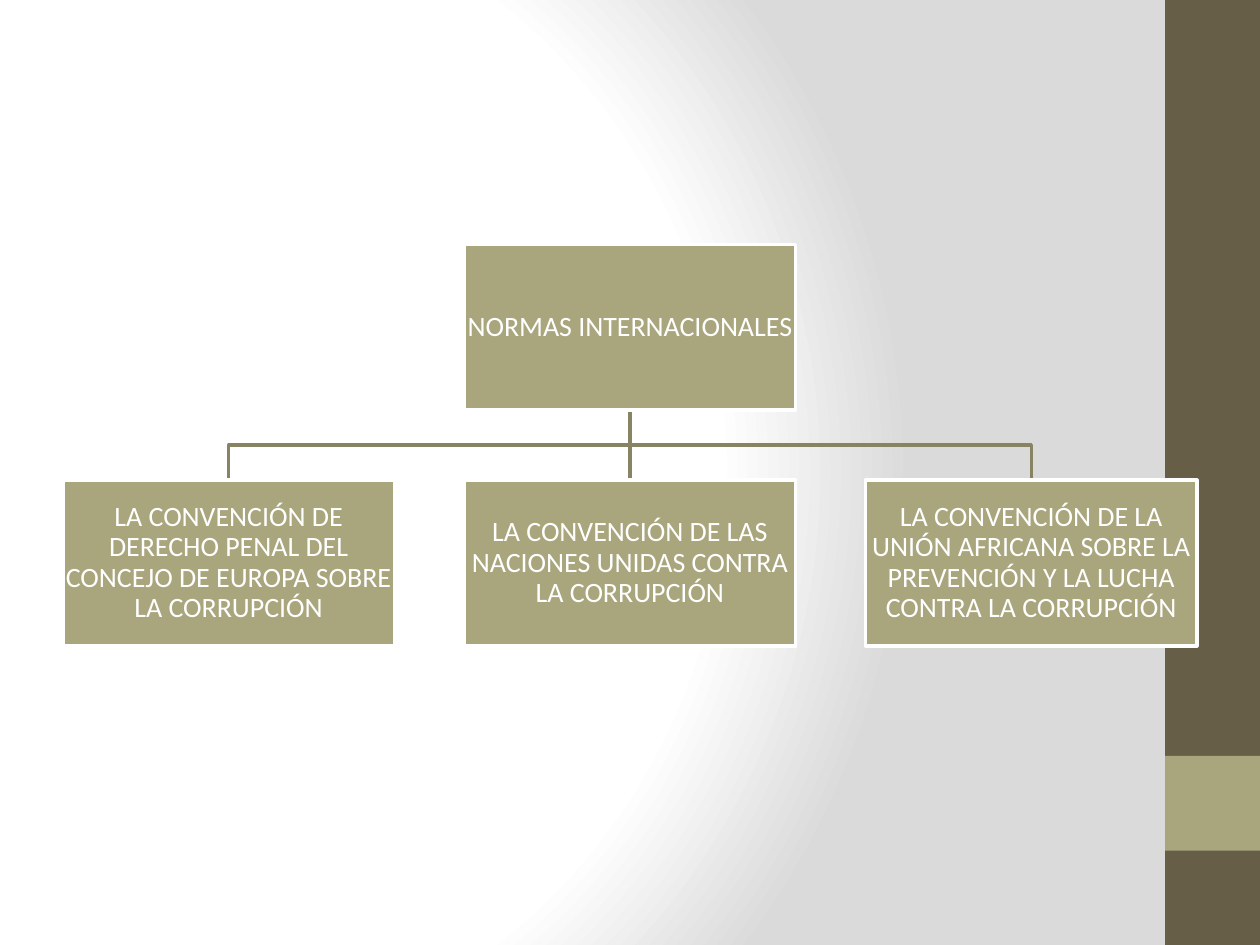
from lxml import etree
from pptx import Presentation
from pptx.dml.color import RGBColor
from pptx.enum.shapes import MSO_CONNECTOR, MSO_SHAPE
from pptx.enum.text import MSO_ANCHOR, PP_ALIGN
from pptx.oxml import parse_xml
from pptx.oxml.ns import nsdecls, qn
from pptx.util import Cm, Pt

RECT = MSO_SHAPE.RECTANGLE
STRAIGHT = MSO_CONNECTOR.STRAIGHT
MIDDLE = MSO_ANCHOR.MIDDLE
CENTER = PP_ALIGN.CENTER

WHITE = RGBColor(0xFF, 0xFF, 0xFF)
GREY = RGBColor(0xDA, 0xDA, 0xDA)
BROWN = RGBColor(0x67, 0x5E, 0x47)
OLIVE = RGBColor(0xA9, 0xA5, 0x7C)
MOSS = RGBColor(0x87, 0x84, 0x63)

ROOT = "NORMAS INTERNACIONALES"
RULES = [
    "LA CONVENCIÓN DE DERECHO PENAL DEL CONCEJO DE EUROPA SOBRE LA CORRUPCIÓN",
    "LA CONVENCIÓN DE LAS NACIONES UNIDAS CONTRA LA CORRUPCIÓN",
    "LA CONVENCIÓN DE LA UNIÓN AFRICANA SOBRE LA PREVENCIÓN Y LA LUCHA "
    "CONTRA LA CORRUPCIÓN",
]
BARS = [(0, 19.05, BROWN), (15.24, 1.91, OLIVE)]  # top, height, colour
STOPS = [(0, WHITE), (75, WHITE), (100, GREY)]

WIDE, HIGH = Cm(25.4), Cm(19.05)
BAR_W = Cm(1.91)
BOX_W, BOX_H = Cm(6.68), Cm(3.34)
EDGE = Cm(1.27)
ROOT_Y, RULE_Y = Cm(4.93), Cm(9.68)
INSET = Cm(0.03)


def paint_back(slide):
    """Fill the background with a round gradient."""
    slide.background.fill.gradient()
    grad = slide.background._cSld.find(".//" + qn("a:gradFill"))
    stops = "".join(
        f'<a:gs pos="{pos * 1000}"><a:srgbClr val="{color}"/></a:gs>'
        for pos, color in STOPS)
    fresh = parse_xml(
        f'<a:gradFill {nsdecls("a")} rotWithShape="1"><a:gsLst>{stops}</a:gsLst>'
        '<a:path path="circle"><a:fillToRect l="20000" t="50000" r="100000" '
        'b="50000"/></a:path></a:gradFill>')
    grad.getparent().replace(grad, fresh)


def add_rect(slide, left, top, width, height, color):
    shape = slide.shapes.add_shape(RECT, left, top, width, height)
    shape.shadow.inherit = False
    shape.fill.solid()
    shape.fill.fore_color.rgb = color
    shape.line.fill.background()
    return shape


def add_box(slide, left, top, text):
    box = add_rect(slide, left, top, BOX_W, BOX_H, OLIVE)
    box.line.color.rgb = WHITE
    box.line.width = Pt(2)
    frame = box.text_frame
    frame.word_wrap = True
    frame.vertical_anchor = MIDDLE
    frame.margin_left = frame.margin_right = INSET
    frame.margin_top = frame.margin_bottom = INSET
    frame.text = text
    para = frame.paragraphs[0]
    para.alignment = CENTER
    para.line_spacing = 0.9
    font = para.runs[0].font
    font.name, font.size = "Calibri", Pt(16)
    font.color.rgb = WHITE


def add_link(slide, start, end):
    """Join two x positions across the gap, with an elbow if they differ."""
    top = ROOT_Y + BOX_H
    mid = (top + RULE_Y) // 2
    if start == end:
        link = slide.shapes.add_connector(STRAIGHT, start, top, end, RULE_Y)
        etree.SubElement(link._element.spPr, qn("a:effectLst"))
    else:
        path = slide.shapes.build_freeform(start, top)
        path.add_line_segments(
            [(start, mid), (end, mid), (end, RULE_Y)], close=False)
        link = path.convert_to_shape()
        link.shadow.inherit = False
        link.fill.background()
    link.line.color.rgb = MOSS
    link.line.width = Pt(2)


def main():
    deck = Presentation()
    deck.slide_width, deck.slide_height = WIDE, HIGH
    slide = deck.slides.add_slide(deck.slide_layouts[6])
    paint_back(slide)
    for top, height, color in BARS:
        add_rect(slide, WIDE - BAR_W, Cm(top), BAR_W, Cm(height), color)

    step = (WIDE - 2 * EDGE - BOX_W) // (len(RULES) - 1)
    lefts = [EDGE + i * step for i in range(len(RULES))]
    center = WIDE // 2
    root_x = center - BOX_W // 2
    for left in reversed(lefts):
        add_link(slide, center, left + BOX_W // 2)
    add_box(slide, root_x, ROOT_Y, ROOT)
    for left, text in zip(lefts, RULES):
        add_box(slide, left, RULE_Y, text)
    deck.save("out.pptx")


if __name__ == "__main__":
    main()
